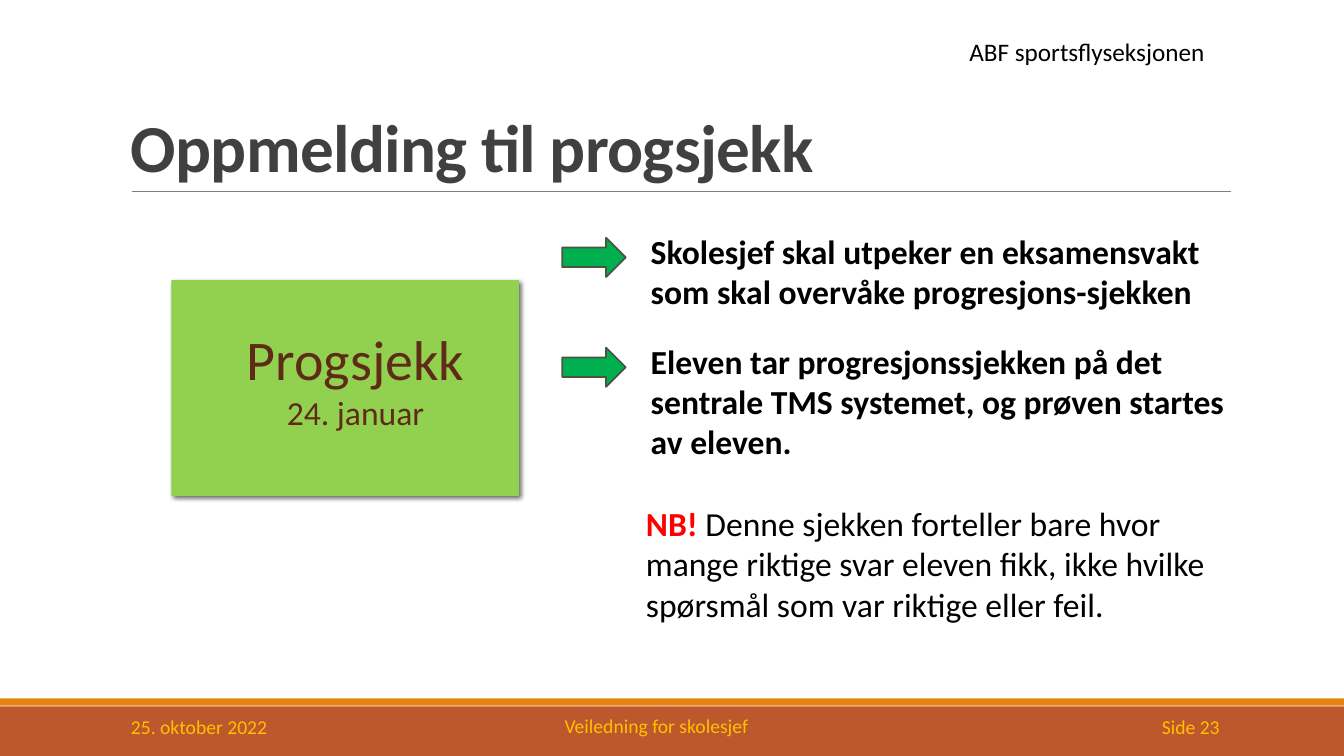
from lxml.etree import SubElement
from pptx import Presentation
from pptx.dml.color import RGBColor
from pptx.enum.shapes import MSO_CONNECTOR as Line, MSO_SHAPE as Shape
from pptx.enum.text import MSO_ANCHOR as Anchor, PP_ALIGN as Align
from pptx.oxml.ns import qn
from pptx.util import Cm, Pt

COLORS = {
    "bar": "BD582C", "strip": "E48312", "rule": "808080", "footer": "FFC000",
    "title": "404040", "card": "92D050", "card_text": "5E2C16",
    "arrow": "00B050", "arrow_edge": "4A543E", "text": "000000", "alert": "FF0000",
}
WIDTH, HEIGHT = 33.87, 19.05


def rgb(name):
    return RGBColor.from_string(COLORS[name])


def style(span, size, color, bold=False):
    span.font.name = "Calibri"
    span.font.size = Pt(size)
    span.font.bold = bold
    span.font.color.rgb = rgb(color)


def add_text(page, box, text, size, color, bold=False, align=Align.LEFT, anchor=Anchor.TOP):
    frame = page.shapes.add_textbox(*map(Cm, box)).text_frame
    frame.word_wrap = True
    frame.vertical_anchor = anchor
    frame.text = text
    for para in frame.paragraphs:
        para.alignment = align
        for span in para.runs:
            style(span, size, color, bold)
    return frame


def add_block(page, kind, box, fill, edge=None):
    block = page.shapes.add_shape(kind, *map(Cm, box))
    block.shadow.inherit = False
    block.fill.solid()
    block.fill.fore_color.rgb = rgb(fill)
    if edge:
        block.line.color.rgb = rgb(edge)
        block.line.width = Pt(1.25)
    else:
        block.line.fill.background()
    return block


def add_shadow(block):
    effects = block._element.spPr.find(qn("a:effectLst"))
    shadow = SubElement(effects, qn("a:outerShdw"), blurRad=str(Pt(3.5)),
                        dist=str(Pt(2)), dir="2700000", algn="tl", rotWithShape="0")
    color = SubElement(shadow, qn("a:srgbClr"), val=COLORS["text"])
    SubElement(color, qn("a:alpha"), val="60000")


def add_header(page, left, top, width, height):
    bottom = top + height
    rule = page.shapes.add_connector(
        Line.STRAIGHT, Cm(left + 0.28), Cm(bottom), Cm(left + width), Cm(bottom))
    rule.line.color.rgb = rgb("rule")
    rule.line.width = Pt(0.5)
    SubElement(rule._element.spPr, qn("a:effectLst"))
    add_text(page, (left + width - 6.83, top, 6.81, 1.02), "ABF sportsflyseksjonen", 18, "text")
    title = add_text(page, (left, top, width, height), "Oppmelding til progsjekk",
                     48, "title", True, anchor=Anchor.BOTTOM)
    para = title.paragraphs[0]
    para.line_spacing = 0.85
    para.runs[0].font._element.set("spc", "-50")


def add_footer(page, left, top, width, height):
    add_block(page, Shape.RECTANGLE, (left, top, width, height), "bar")
    add_block(page, Shape.RECTANGLE, (left, top - 0.2, width, 0.18), "strip")
    for offset, drop, span_width, text, align in (
        (3.05, 0, 6.86, "25. oktober 2022", Align.LEFT),
        (11.81, -0.03, 9.47, "Veiledning for skolesjef", Align.CENTER),
        (27.36, 0, 3.63, "Side 23", Align.RIGHT),
    ):
        add_text(page, (left + offset, top + drop, span_width, 1.02), text, 14, "footer",
                 align=align, anchor=Anchor.MIDDLE)


def add_card(page, left, top, width, height):
    add_shadow(add_block(page, Shape.RECTANGLE, (left, top, width, height), "card"))
    label = add_text(page, (left + 1.4, top + 1, 6.48, 3), "Progsjekk\n24. januar",
                     40, "card_text", align=Align.CENTER)
    label.paragraphs[1].runs[0].font.size = Pt(24)


def add_step(page, left, top, width, height, text):
    add_block(page, Shape.RIGHT_ARROW, (left, top + 0.3, 1.6, 0.99), "arrow", "arrow_edge")
    add_text(page, (left + 1.98, top, width - 1.98, height), text, 24, "text", True)


def add_note(page, left, top, width, height):
    note = add_text(page, (left, top, width, height), "NB!", 24, "alert", True)
    span = note.paragraphs[0].add_run()
    span.text = (" Denne sjekken forteller bare hvor mange riktige svar eleven fikk, "
                 "ikke hvilke spørsmål som var riktige eller feil.")
    style(span, 24, "text")


def main():
    deck = Presentation()
    deck.slide_width, deck.slide_height = Cm(WIDTH), Cm(HEIGHT)
    page = deck.slides.add_slide(deck.slide_layouts[6])
    add_footer(page, 0, 17.8, WIDTH, HEIGHT - 17.8)
    add_header(page, 3.05, 0.79, 27.96, 4.04)
    add_card(page, 4.32, 7.06, 8.76, 5.44)
    add_step(page, 14.17, 5.69, 17.09, 2.31,
             "Skolesjef skal utpeker en eksamensvakt som skal overvåke progresjons-sjekken")
    add_step(page, 14.17, 8.46, 17.09, 3.33,
             "Eleven tar progresjonssjekken på det sentrale TMS systemet, "
             "og prøven startes av eleven.")
    add_note(page, 16.03, 12.55, 15.39, 3.33)
    deck.save("out.pptx")


if __name__ == "__main__":
    main()
